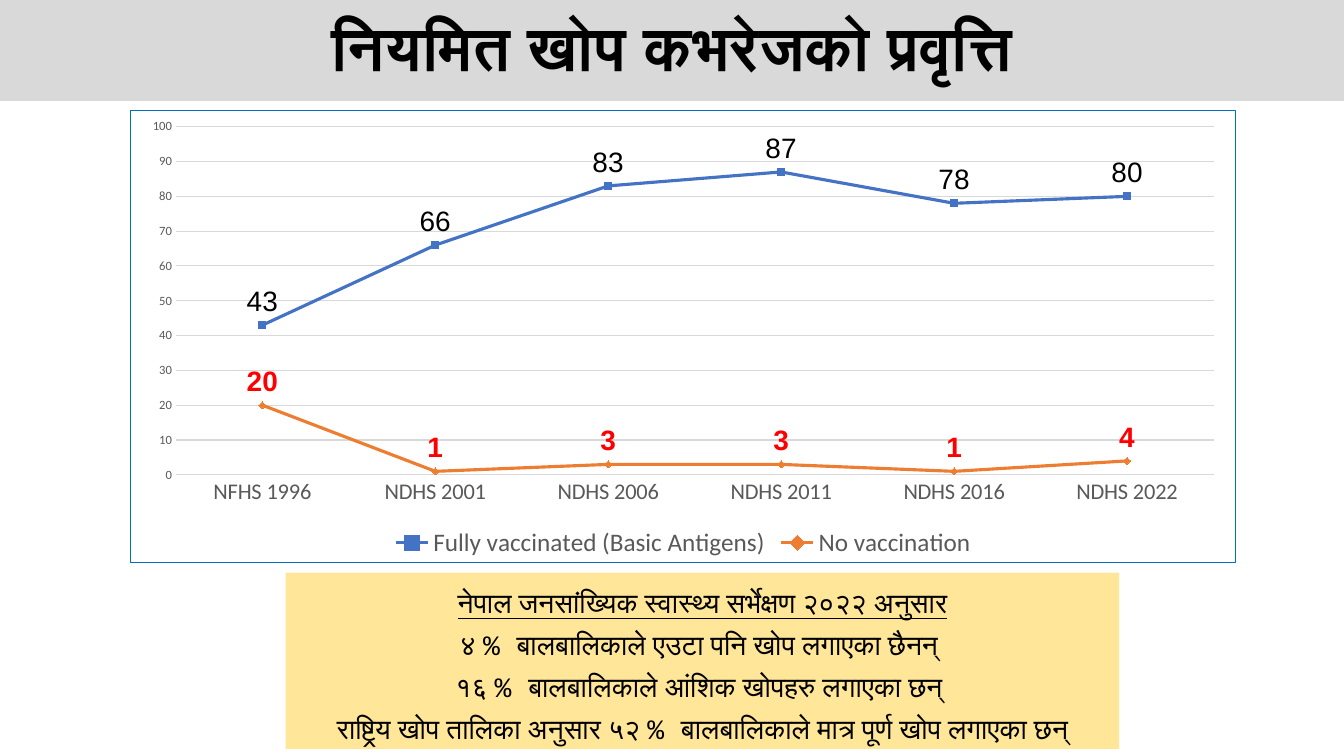
from lxml import etree
from pptx import Presentation
from pptx.chart.data import CategoryChartData
from pptx.dml.color import RGBColor
from pptx.enum.chart import XL_CHART_TYPE, XL_LABEL_POSITION, XL_LEGEND_POSITION, XL_TICK_MARK
from pptx.enum.text import MSO_ANCHOR, PP_ALIGN
from pptx.oxml import parse_xml
from pptx.util import Pt

LINE = XL_CHART_TYPE.LINE
ABOVE = XL_LABEL_POSITION.ABOVE
BOTTOM = XL_LEGEND_POSITION.BOTTOM
NO_TICK = XL_TICK_MARK.NONE
MIDDLE = MSO_ANCHOR.MIDDLE
TOP = MSO_ANCHOR.TOP
CENTER = PP_ALIGN.CENTER

COLORS = {
    "band": "D9D9D9", "note": "FFE699", "text": "000000", "axis": "595959",
    "grid": "D9D9D9", "border": "0070C0", "full": "4472C4", "none": "ED7D31",
    "alert": "FF0000",
}
NS_C = "http://schemas.openxmlformats.org/drawingml/2006/chart"
NS_A = "http://schemas.openxmlformats.org/drawingml/2006/main"

TITLE = "नियमित खोप कभरेजको प्रवृत्ति"
SURVEYS = ["NFHS 1996", "NDHS 2001", "NDHS 2006", "NDHS 2011", "NDHS 2016", "NDHS 2022"]
SERIES = [
    ("Fully vaccinated (Basic Antigens)", (43, 66, 83, 87, 78, 80), "full", "text", False),
    ("No vaccination", (20, 1, 3, 3, 1, 4), "none", "alert", True),
]
NOTES = [
    "नेपाल जनसांख्यिक स्वास्थ्य सर्भेक्षण २०२२ अनुसार",
    "४ % बालबालिकाले एउटा पनि खोप लगाएका छैनन् ",
    "१६ % बालबालिकाले आंशिक खोपहरु लगाएका छन् ",
    "राष्ट्रिय खोप तालिका अनुसार ५२ % बालबालिकाले मात्र पूर्ण खोप लगाएका छन्",
]


def rgb(name):
    return RGBColor.from_string(COLORS[name])


def set_font(font, size, color, name="Calibri", bold=False):
    font.size = Pt(size)
    font.name = name
    font.bold = bold
    font.color.rgb = rgb(color)


def place(sp, box):
    sp.left, sp.top, sp.width, sp.height = (Pt(v) for v in box)


def fill_box(sp, color, anchor):
    sp.fill.solid()
    sp.fill.fore_color.rgb = rgb(color)
    tf = sp.text_frame
    tf.word_wrap = True
    tf.vertical_anchor = anchor
    return tf


def add_title(slide, box):
    sp = slide.shapes.title
    place(sp, box)
    tf = fill_box(sp, "band", MIDDLE)
    tf.text = TITLE
    p = tf.paragraphs[0]
    p.alignment = CENTER
    p.line_spacing = 0.9
    set_font(p.runs[0].font, 44, "text", "Courier New", True)


def add_border(chart):
    border = parse_xml(
        f'<c:spPr xmlns:c="{NS_C}" xmlns:a="{NS_A}"><a:noFill/><a:ln w="{Pt(0.75)}">'
        f'<a:solidFill><a:srgbClr val="{COLORS["border"]}"/></a:solidFill></a:ln></c:spPr>')
    chart.element.find(etree.QName(NS_C, "chart").text).addnext(border)


def format_axes(chart):
    cat, val = chart.category_axis, chart.value_axis
    for axis, size in ((cat, 16), (val, 9)):
        axis.major_tick_mark = axis.minor_tick_mark = NO_TICK
        set_font(axis.tick_labels.font, size, "axis")
    val.minimum_scale, val.maximum_scale, val.major_unit = 0, 100, 10
    val.has_major_gridlines = True
    val.format.line.fill.background()
    for line in (cat.format.line, val.major_gridlines.format.line):
        line.color.rgb = rgb("grid")
        line.width = Pt(0.75)


def add_coverage_chart(slide, box):
    data = CategoryChartData()
    data.categories = SURVEYS
    for name, values, *_ in SERIES:
        data.add_series(name, values)
    chart = slide.shapes.add_chart(LINE, *(Pt(v) for v in box), data).chart
    set_font(chart.font, 10, "text")
    chart.has_title = False
    chart.has_legend = True
    chart.legend.position = BOTTOM
    chart.legend.include_in_layout = False
    set_font(chart.legend.font, 18, "axis")
    format_axes(chart)
    add_border(chart)
    plot = chart.plots[0]
    plot.vary_by_categories = False
    for series, (_, _, color, label, bold) in zip(plot.series, SERIES):
        series.smooth = False
        series.format.line.color.rgb = rgb(color)
        series.format.line.width = Pt(2.25)
        series.marker.style = None
        labels = series.data_labels
        labels.show_value = True
        labels.position = ABOVE
        set_font(labels.font, 20, label, "Arial", bold)


def add_notes_box(slide, box):
    sp = slide.shapes.add_textbox(*(Pt(v) for v in box))
    tf = fill_box(sp, "note", TOP)
    for i, text in enumerate(NOTES):
        p = tf.add_paragraph() if i else tf.paragraphs[0]
        p.text = text
        p.alignment = CENTER
        p.line_spacing = 1.25
        font = p.runs[0].font
        set_font(font, 20, "text", "Courier New")
        font.underline = i == 0


def main():
    prs = Presentation()
    prs.slide_width, prs.slide_height = Pt(960), Pt(540)
    slide = prs.slides.add_slide(prs.slide_layouts[5])
    add_coverage_chart(slide, (93, 78.5, 790, 324))
    add_title(slide, (0, 0, 960, 72))
    add_notes_box(slide, (204, 409, 595.5, 126))
    prs.save("out.pptx")


if __name__ == "__main__":
    main()
